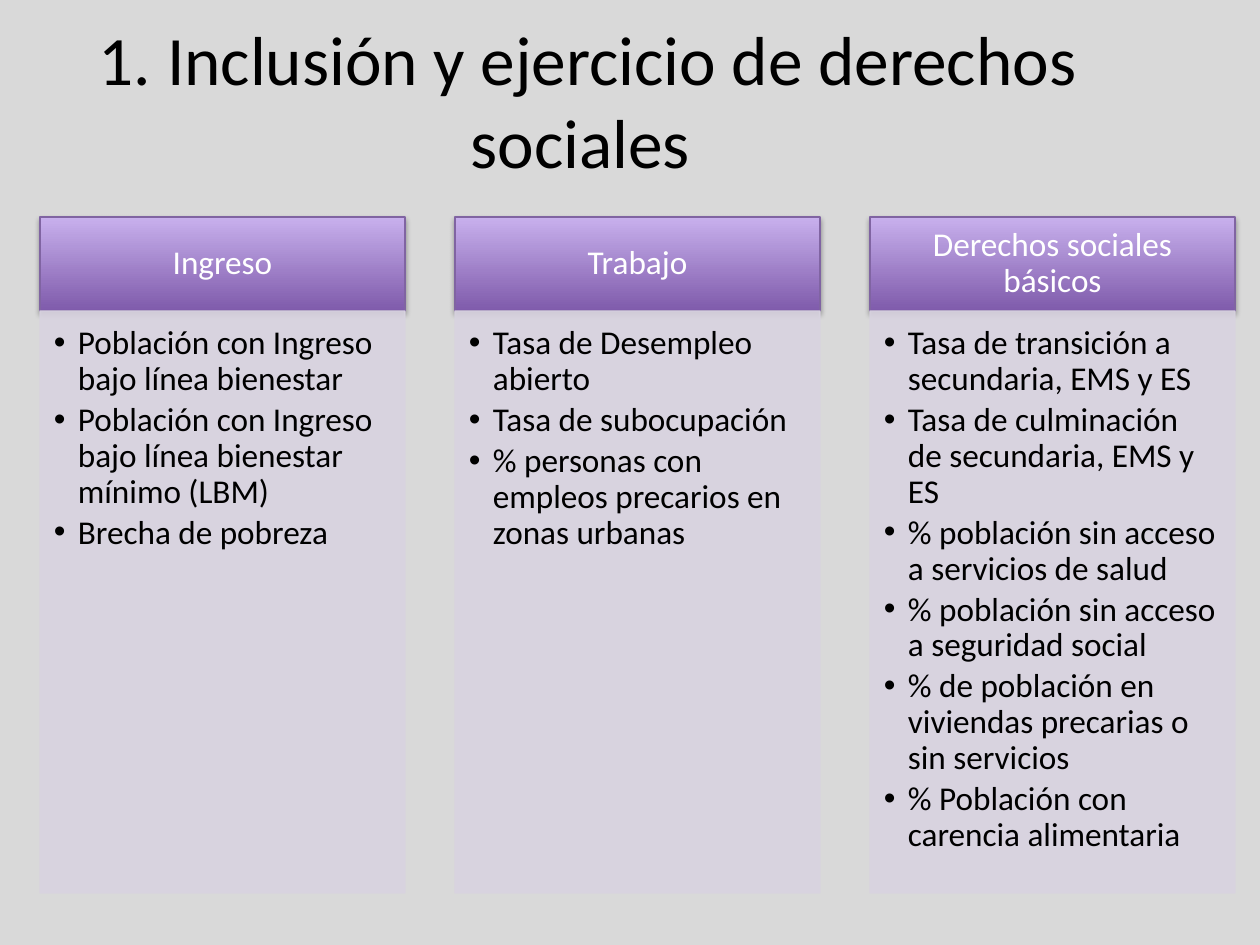
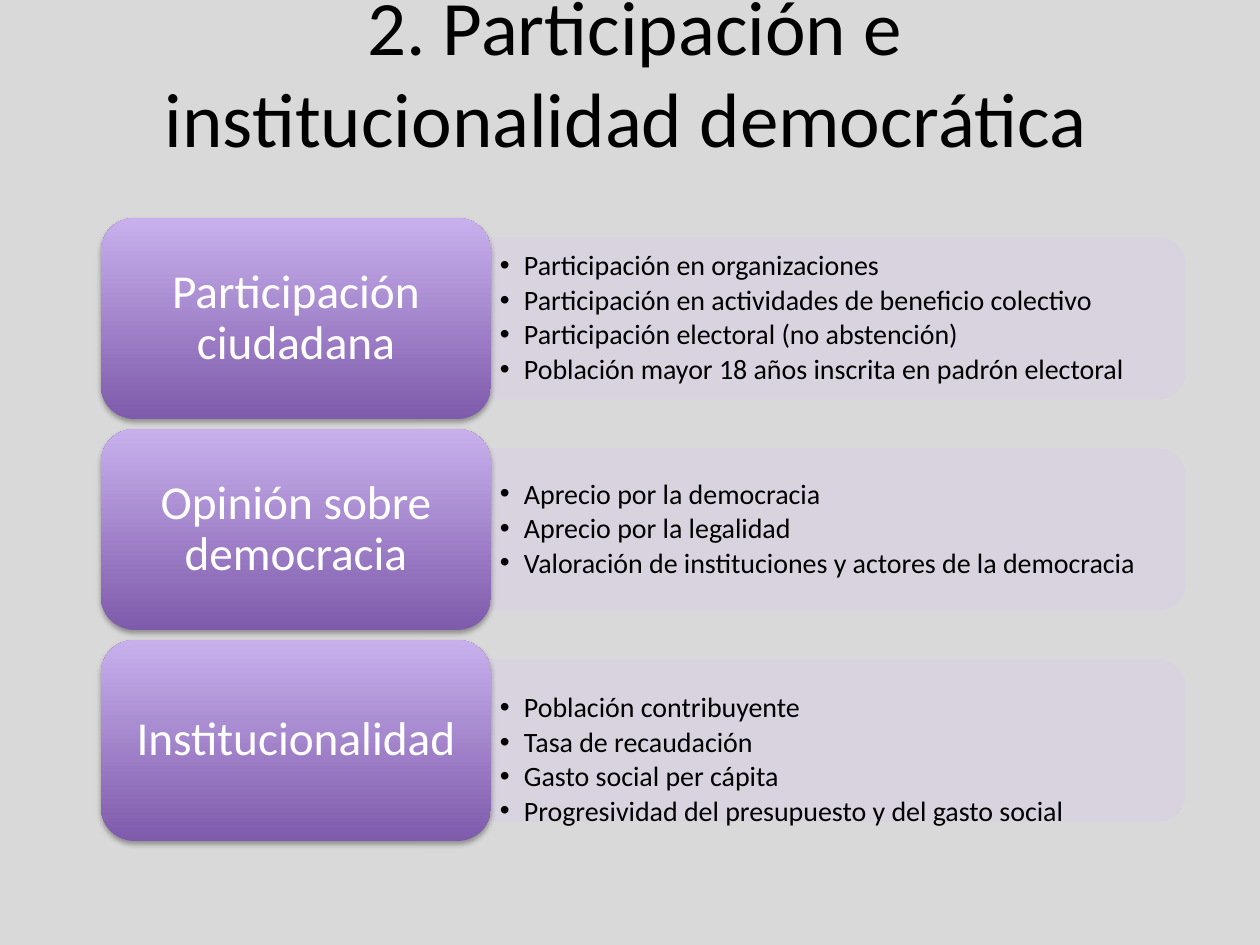
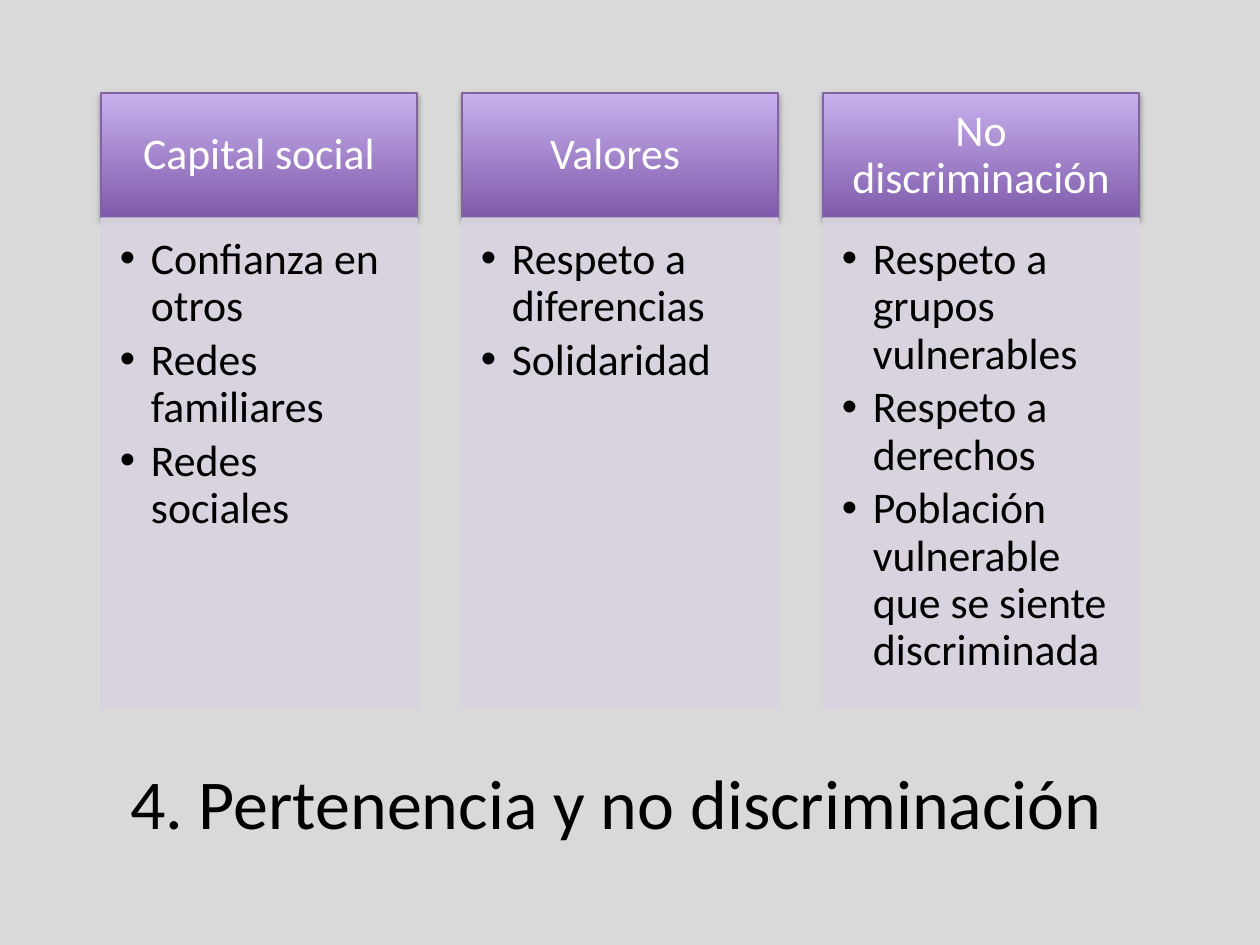
from lxml import etree
from pptx import Presentation
from pptx.dml.color import RGBColor
from pptx.enum.shapes import MSO_SHAPE
from pptx.enum.text import MSO_ANCHOR, PP_ALIGN
from pptx.oxml import parse_xml
from pptx.oxml.ns import nsdecls, qn
from pptx.util import Emu, Pt

RECT = MSO_SHAPE.RECTANGLE
ROUNDED = MSO_SHAPE.ROUNDED_RECTANGLE
ROUNDED_TOP = MSO_SHAPE.ROUND_2_SAME_RECTANGLE
TOP, MIDDLE = MSO_ANCHOR.TOP, MSO_ANCHOR.MIDDLE
LEFT, CENTER = PP_ALIGN.LEFT, PP_ALIGN.CENTER

BACKGROUND = RGBColor(0xD9, 0xD9, 0xD9)
BLACK = RGBColor(0, 0, 0)
WHITE = RGBColor(0xFF, 0xFF, 0xFF)
PURPLE_DARK = RGBColor(0x7F, 0x5B, 0xAB)
PURPLE_LIGHT = RGBColor(0xC8, 0xB0, 0xED)
PURPLE_EDGE = RGBColor(0x80, 0x64, 0xA2)
LILAC = RGBColor(0xD8, 0xD3, 0xE0)

FONT = "Calibri"
PX_PER_INCH = 126
SOFT_SHADOW = (
    f'<a:effectLst {nsdecls("a")}><a:outerShdw blurRad="40000" dist="23000" '
    'dir="5400000" rotWithShape="0"><a:srgbClr val="000000">'
    '<a:alpha val="35000"/></a:srgbClr></a:outerShdw></a:effectLst>'
)


def px(length):
    return Emu(round(length * 914400 / PX_PER_INCH))


def add_bullet(paragraph, indent):
    props = paragraph._p.get_or_add_pPr()
    props.set("marL", str(px(indent)))
    props.set("indent", str(-px(indent)))
    etree.SubElement(props, qn("a:buFont"), typeface="Arial")
    etree.SubElement(props, qn("a:buChar"), char="•")


def write(shape, *lines, size, color=BLACK, align=CENTER, anchor=MIDDLE,
          insets=(13, 6, 13, 6), spacing=None, bullet_indent=None):
    """Write one paragraph per line; insets are left, top, right, bottom."""
    frame = shape.text_frame
    frame.word_wrap = True
    frame.vertical_anchor = anchor
    (frame.margin_left, frame.margin_top,
     frame.margin_right, frame.margin_bottom) = map(px, insets)
    for index, line in enumerate(lines):
        paragraph = frame.paragraphs[0] if index == 0 else frame.add_paragraph()
        paragraph.alignment = align
        if spacing:
            paragraph.line_spacing = spacing
        if bullet_indent:
            paragraph.space_after = Pt(size * 0.15)
            add_bullet(paragraph, bullet_indent)
        run = paragraph.add_run()
        run.text = line
        run.font.name = FONT
        run.font.size = Pt(size)
        run.font.color.rgb = color


class Deck:
    def __init__(self):
        self.presentation = Presentation()
        self.presentation.slide_width = px(1260)
        self.presentation.slide_height = px(945)
        self.slide = None

    def start_slide(self):
        self.slide = self.presentation.slides.add_slide(
            self.presentation.slide_layouts[6])
        background = self.slide.background.fill
        background.solid()
        background.fore_color.rgb = BACKGROUND

    def text_box(self, x, y, w, h):
        return self.slide.shapes.add_textbox(px(x), px(y), px(w), px(h))

    def title(self, text, box, size):
        write(self.text_box(*box), text, size=size)

    def heading(self, text, box, size, insets, kind=RECT, edge=PURPLE_EDGE):
        """Add a shaded purple block with a soft shadow and white text."""
        block = self.slide.shapes.add_shape(kind, *map(px, box))
        block.fill.gradient()
        block.fill.gradient_angle = 90
        for stop, color in zip(block.fill.gradient_stops,
                               (PURPLE_DARK, PURPLE_LIGHT)):
            stop.color.rgb = color
        first, last = block.fill.gradient_stops
        first.position, last.position = 0, 1
        if edge:
            block.line.color.rgb = edge
            block.line.width = Pt(0.75)
        else:
            block.line.fill.background()
        block._element.spPr.append(parse_xml(SOFT_SHADOW))
        write(block, text, size=size, color=WHITE, insets=insets, spacing=0.9)

    def panel(self, x, y, w, h, kind=RECT):
        """Add a slightly transparent lilac area."""
        area = self.slide.shapes.add_shape(kind, px(x), px(y), px(w), px(h))
        area.shadow.inherit = False
        area.fill.solid()
        area.fill.fore_color.rgb = LILAC
        area.line.color.rgb = LILAC
        area.line.width = Pt(0.75)
        for color in area._element.spPr.iter(qn("a:srgbClr")):
            etree.SubElement(color, qn("a:alpha"), val="90000")
        return area

    def bullets(self, shape, items, size, insets, indent, anchor=TOP):
        write(shape, *items, size=size, align=LEFT, anchor=anchor,
              insets=insets, spacing=0.9, bullet_indent=indent)

    def columns(self, groups, left, top, width, pitch, head_height, body_height,
                size, head_insets, body_insets, indent):
        for index, (name, items) in enumerate(groups):
            x = left + index * pitch
            self.heading(name, (x, top, width, head_height), size, head_insets)
            body = self.panel(x, top + head_height, width, body_height)
            self.bullets(body, items, size, body_insets, indent)

    def row(self, name, items, top, text_drop):
        """Add a rounded heading with a band of bullets to its right."""
        x, y, length, height = 491, top + 20, 694, 161
        # The band is a shape with a rounded top, turned to face right.
        turn = (length - height) / 2
        band = self.panel(x + turn, y - turn, height, length, ROUNDED_TOP)
        band.rotation = 90
        self.bullets(self.text_box(x, y + 8 + text_drop, 687, 145), items,
                     16, (9, 4, 9, 4), 24, anchor=MIDDLE)
        self.heading(name, (101, top, 390, 201), 27, (24, 18, 24, 18),
                     kind=ROUNDED, edge=None)


INCLUSION = [
    ("Ingreso", ["Población con Ingreso bajo línea bienestar",
                 "Población con Ingreso bajo línea bienestar mínimo (LBM)",
                 "Brecha de pobreza"]),
    ("Trabajo", ["Tasa de Desempleo abierto",
                 "Tasa de subocupación",
                 "% personas con empleos precarios en zonas urbanas"]),
    ("Derechos sociales básicos", [
        "Tasa de transición a secundaria, EMS y ES",
        "Tasa de culminación de secundaria, EMS y ES",
        "% población sin acceso a servicios de salud",
        "% población sin acceso a seguridad social",
        "% de población en viviendas precarias o sin servicios",
        "% Población con carencia alimentaria"]),
]
# Each row ends with how far its bullets sit below the middle of the band.
PARTICIPATION = [
    ("Participación ciudadana", [
        "Participación en organizaciones",
        "Participación en actividades de beneficio colectivo",
        "Participación electoral (no abstención)",
        "Población mayor 18 años inscrita en padrón electoral"], 0),
    ("Opinión sobre democracia", [
        "Aprecio por la democracia",
        "Aprecio por la legalidad",
        "Valoración de instituciones y actores de la democracia"], 0),
    ("Institucionalidad", [
        "Población contribuyente",
        "Tasa de recaudación",
        "Gasto social per cápita",
        "Progresividad del presupuesto y del gasto social"], 20),
]
BELONGING = [
    ("Capital social", ["Confianza en otros", "Redes familiares",
                        "Redes sociales"]),
    ("Valores ", ["Respeto a diferencias", "Solidaridad"]),
    ("No discriminación", ["Respeto a grupos vulnerables",
                           "Respeto a derechos",
                           "Población vulnerable que se siente discriminada"]),
]


def main():
    deck = Deck()

    deck.start_slide()
    deck.title("1. Inclusión y ejercicio de derechos sociales ",
               (68, 4, 1040, 190), 39.6)
    deck.columns(INCLUSION, left=40, top=217, width=365, pitch=415,
                 head_height=94, body_height=582, size=19,
                 head_insets=(19, 10, 19, 10), body_insets=(14, 15, 16, 21),
                 indent=24)

    deck.start_slide()
    deck.title("2. Participación e institucionalidad democrática ",
               (105, 0, 1060, 141), 44)
    for index, (name, items, text_drop) in enumerate(PARTICIPATION):
        deck.row(name, items, 218 + index * 211, text_drop)

    deck.start_slide()
    deck.title("4. Pertenencia y no discriminación", (87, 753, 1058, 97), 40)
    deck.columns(BELONGING, left=101, top=93, width=316, pitch=361,
                 head_height=125, body_height=491, size=25,
                 head_insets=(24, 14, 24, 14), body_insets=(19, 19, 24, 28),
                 indent=31)

    deck.presentation.save("out.pptx")


if __name__ == "__main__":
    main()
